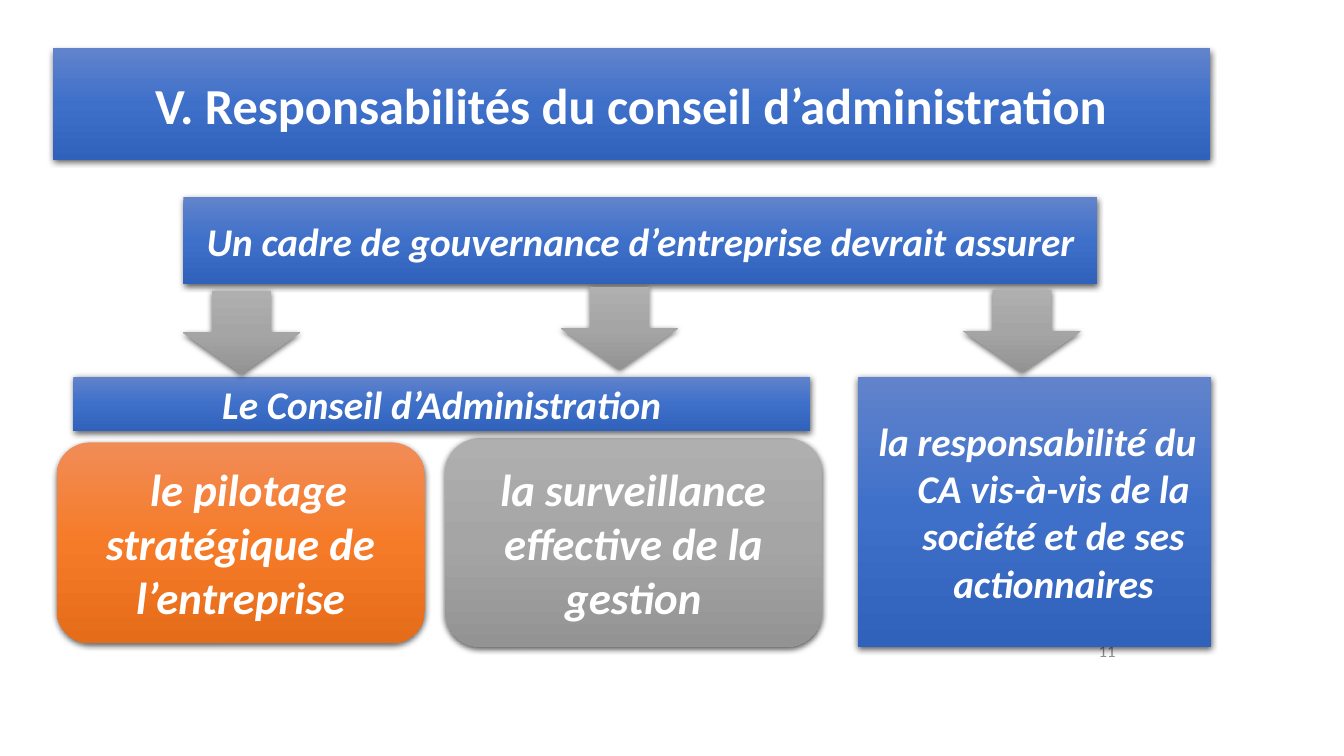
"""Build the slide on the responsibilities of the board of directors."""
from copy import deepcopy

from lxml import etree
from pptx import Presentation
from pptx.dml.color import RGBColor
from pptx.enum.shapes import MSO_SHAPE
from pptx.enum.text import MSO_ANCHOR, PP_ALIGN
from pptx.oxml.ns import qn
from pptx.util import Pt

RECT = MSO_SHAPE.RECTANGLE
ROUNDED = MSO_SHAPE.ROUNDED_RECTANGLE
ARROW = MSO_SHAPE.DOWN_ARROW
MIDDLE = MSO_ANCHOR.MIDDLE
CENTER, RIGHT = PP_ALIGN.CENTER, PP_ALIGN.RIGHT

COLORS = {"white": "FFFFFF", "number": "8C8C8C", "shadow": "000000"}
GRADIENTS = {
    "blue": ("6183CB", "3E70CA", "3062BB"),
    "orange": ("F18C57", "F67B28", "E56C19"),
    "gray": ("AFAFAF", "A5A5A5", "939393"),
}
HANGING = Pt(27)


def place(sp, box):
    """Move a shape to a box of left, top, width and height in points."""
    sp.left, sp.top, sp.width, sp.height = (Pt(v) for v in box)


def paint(sp, gradient):
    """Give a shape a three-stop vertical gradient, no line and a soft shadow."""
    sp.fill.gradient()
    sp.fill.gradient_angle = 270
    stops = sp._element.spPr.find(qn("a:gradFill")).find(qn("a:gsLst"))
    stops.insert(1, deepcopy(stops[0]))
    for i, (stop, color) in enumerate(zip(sp.fill.gradient_stops, GRADIENTS[gradient])):
        stop.position = i / 2
        stop.color.rgb = RGBColor.from_string(color)
    sp.line.fill.background()
    sp.shadow.inherit = False
    effects = sp._element.spPr.find(qn("a:effectLst"))
    shadow = etree.SubElement(effects, qn("a:outerShdw"), blurRad=str(Pt(4.5)),
                              dist=str(Pt(1.5)), dir="5400000", algn="ctr", rotWithShape="0")
    color = etree.SubElement(shadow, qn("a:srgbClr"), val=COLORS["shadow"])
    etree.SubElement(color, qn("a:alpha"), val="63000")


def write(sp, runs, color="white", bold=True, italic=True, align=CENTER,
          hanging=False, wrap=True):
    """Write one paragraph of (text, size) runs in a shape."""
    tf = sp.text_frame
    tf.word_wrap = wrap
    tf.vertical_anchor = MIDDLE
    p = tf.paragraphs[0]
    p.alignment = align
    font = p.font
    font.name, font.bold, font.italic = "Calibri", bold, italic
    font.color.rgb = RGBColor.from_string(COLORS[color])
    if hanging:
        pPr = p._p.get_or_add_pPr()
        pPr.set("marL", str(HANGING))
        pPr.set("indent", str(-HANGING))
    for text, size in runs:
        r = p.add_run()
        r.text = text
        r.font.size = Pt(size)


def add_title(s, box, text):
    """Turn the title placeholder into a can-shaped banner."""
    sp = s.shapes.title
    place(sp, box)
    geometry = etree.SubElement(sp._element.spPr, qn("a:prstGeom"), prst="can")
    etree.SubElement(geometry, qn("a:avLst"))
    paint(sp, "blue")
    write(sp, [(text, 36)], italic=False, wrap=False)


def add_block(s, kind, box, gradient, runs=(), hanging=False):
    """Add a painted shape, with text if there is any."""
    sp = s.shapes.add_shape(kind, *(Pt(v) for v in box))
    paint(sp, gradient)
    if runs:
        write(sp, runs, hanging=hanging)


def add_number(s, box, text):
    """Add the slide number."""
    sp = s.shapes.add_textbox(*(Pt(v) for v in box))
    write(sp, [(text, 12)], "number", bold=False, italic=False, align=RIGHT)


def main():
    """Build and save the slide."""
    prs = Presentation()
    prs.slide_width, prs.slide_height = Pt(960), Pt(540)
    s = prs.slides.add_slide(prs.slide_layouts[5])

    add_title(s, (37.5, 34.5, 827, 79.5), "V. Responsabilités du conseil d’administration")
    add_block(s, RECT, (131, 141, 653, 62), "blue",
              [("Un cadre de gouvernance d’entreprise devrait assurer", 28)], True)
    add_number(s, (636, 450, 168, 29), "11")
    add_block(s, ROUNDED, (40.5, 316, 263, 143.5), "orange",
              [(" ", 18), (" le pilotage stratégique de l’entreprise", 32)])
    add_block(s, ROUNDED, (318, 313, 269, 149), "gray",
              [("la surveillance effective de la gestion", 32)])
    add_block(s, RECT, (52.5, 269, 526, 39), "blue",
              [("Le Conseil d’Administration", 28)], True)
    add_block(s, RECT, (613, 269, 252, 193), "blue",
              [(" ", 18),
               ("la responsabilité du CA vis-à-vis de la société et de ses actionnaires", 28)],
              True)
    for left, top in ((130.5, 208), (400.5, 205), (688, 207)):
        add_block(s, ARROW, (left, top, 84, 59), "gray")

    prs.save("out.pptx")


if __name__ == "__main__":
    main()
